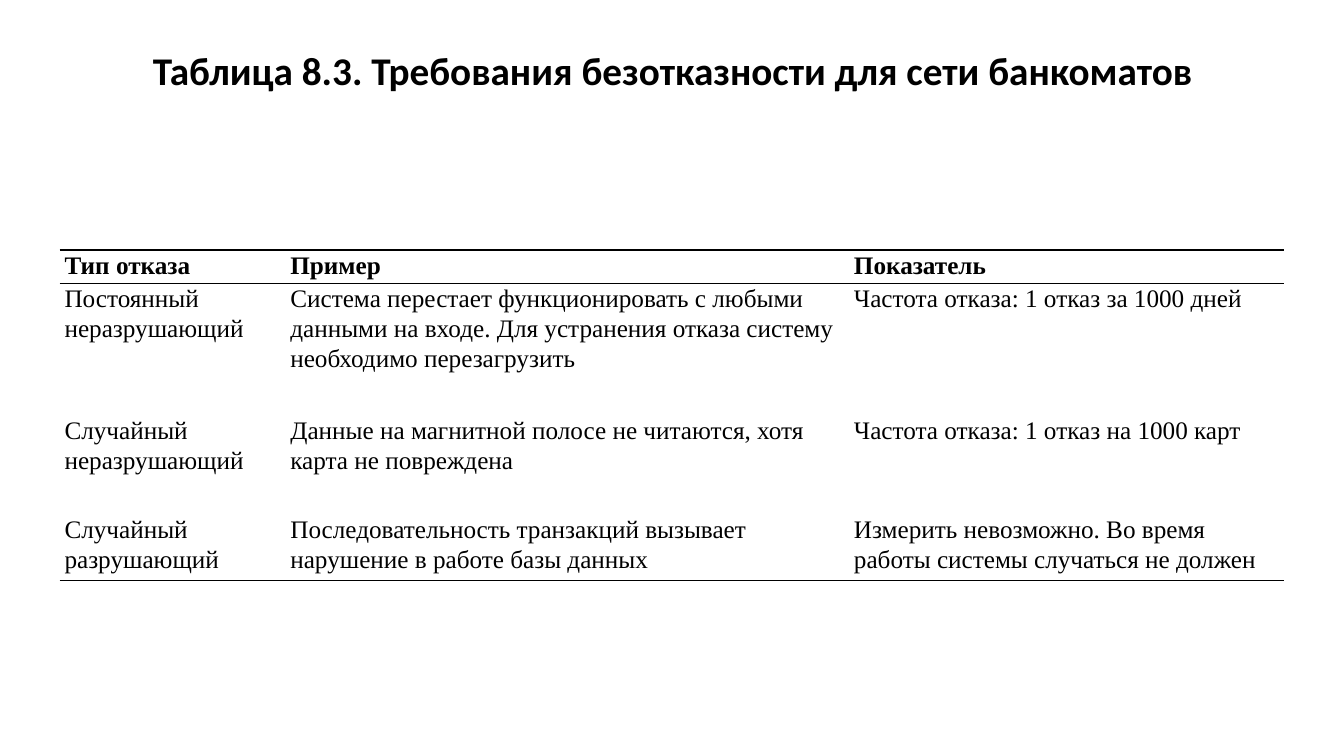
import pptx
import pptx.util
import pptx.dml.color
import pptx.enum.text
import pptx.oxml
import pptx.oxml.ns

Inches = pptx.util.Inches
Pt = pptx.util.Pt
ALIGN = pptx.enum.text.PP_ALIGN
ANCHOR = pptx.enum.text.MSO_ANCHOR

COLORS = {"ink": "000000", "paper": "FFFFFF"}
WIDTHS = [2.24, 5.59, 4.32]
HEIGHTS = [0.33, 1.31, 0.98, 0.66]
ROWS = [
    ["Тип отказа", "Пример", "Показатель"],
    ["Постоянный неразрушающий",
     "Система перестает функционировать с любыми данными на входе. "
     "Для устранения отказа систему необходимо перезагрузить",
     "Частота отказа: 1 отказ за 1000 дней"],
    ["Случайный неразрушающий",
     "Данные на магнитной полосе не читаются, хотя карта не повреждена",
     "Частота отказа: 1 отказ на 1000 карт"],
    ["Случайный разрушающий",
     "Последовательность транзакций вызывает нарушение в работе базы данных",
     "Измерить невозможно. Во время работы системы случаться не должен"],
]


def color(name):
    return pptx.dml.color.RGBColor.from_string(COLORS[name])


def write(frame, text, size=18, font="Times New Roman", bold=False,
          align=ALIGN.LEFT, space=1.07):
    frame.word_wrap = True
    para = frame.paragraphs[0]
    para.alignment = align
    para.line_spacing = space
    run = para.add_run()
    run.text = text
    run.font.size = Pt(size)
    run.font.name = font
    run.font.bold = bold
    run.font.color.rgb = color("ink")


def border(cell, sides):
    props = cell._tc.get_or_add_tcPr()
    for index, side in enumerate("LRTB"):
        fill = "<a:noFill/>"
        if side in sides:
            fill = f'<a:solidFill><a:srgbClr val="{COLORS["ink"]}"/></a:solidFill>'
        line = pptx.oxml.parse_xml(
            f'<a:ln{side} {pptx.oxml.ns.nsdecls("a")} w="{Pt(1)}">{fill}</a:ln{side}>')
        props.insert(index, line)


def heading(slide, left, top, width, height):
    title = slide.shapes.title
    title.left, title.top = Inches(left), Inches(top)
    title.width, title.height = Inches(width), Inches(height)
    frame = title.text_frame
    frame.auto_size = pptx.enum.text.MSO_AUTO_SIZE.NONE
    frame.vertical_anchor = ANCHOR.MIDDLE
    write(frame, "Таблица 8.3. Требования безотказности для сети банкоматов",
          size=28, font="Calibri", bold=True, align=ALIGN.CENTER, space=0.9)


def grid(slide, left, top):
    table = slide.shapes.add_table(
        len(ROWS), len(WIDTHS), Inches(left), Inches(top),
        Inches(sum(WIDTHS)), Inches(sum(HEIGHTS))).table
    table.horz_banding = False
    for col, width in zip(table.columns, WIDTHS):
        col.width = Inches(width)
    sides = ["TB", "T", "", "B"]
    for r, texts in enumerate(ROWS):
        table.rows[r].height = Inches(HEIGHTS[r])
        for c, text in enumerate(texts):
            cell = table.cell(r, c)
            cell.margin_left = cell.margin_right = Inches(0.05)
            cell.margin_top = cell.margin_bottom = 0
            cell.vertical_anchor = ANCHOR.TOP
            cell.fill.solid()
            cell.fill.fore_color.rgb = color("paper")
            write(cell.text_frame, text, bold=r == 0)
            border(cell, sides[r])


def main():
    deck = pptx.Presentation()
    deck.slide_width, deck.slide_height = Inches(13.33), Inches(7.5)
    slide = deck.slides.add_slide(deck.slide_layouts[5])
    heading(slide, 0.92, 0.45, 11.5, 0.55)
    grid(slide, 0.59, 2.48)
    deck.save("out.pptx")


if __name__ == "__main__":
    main()
